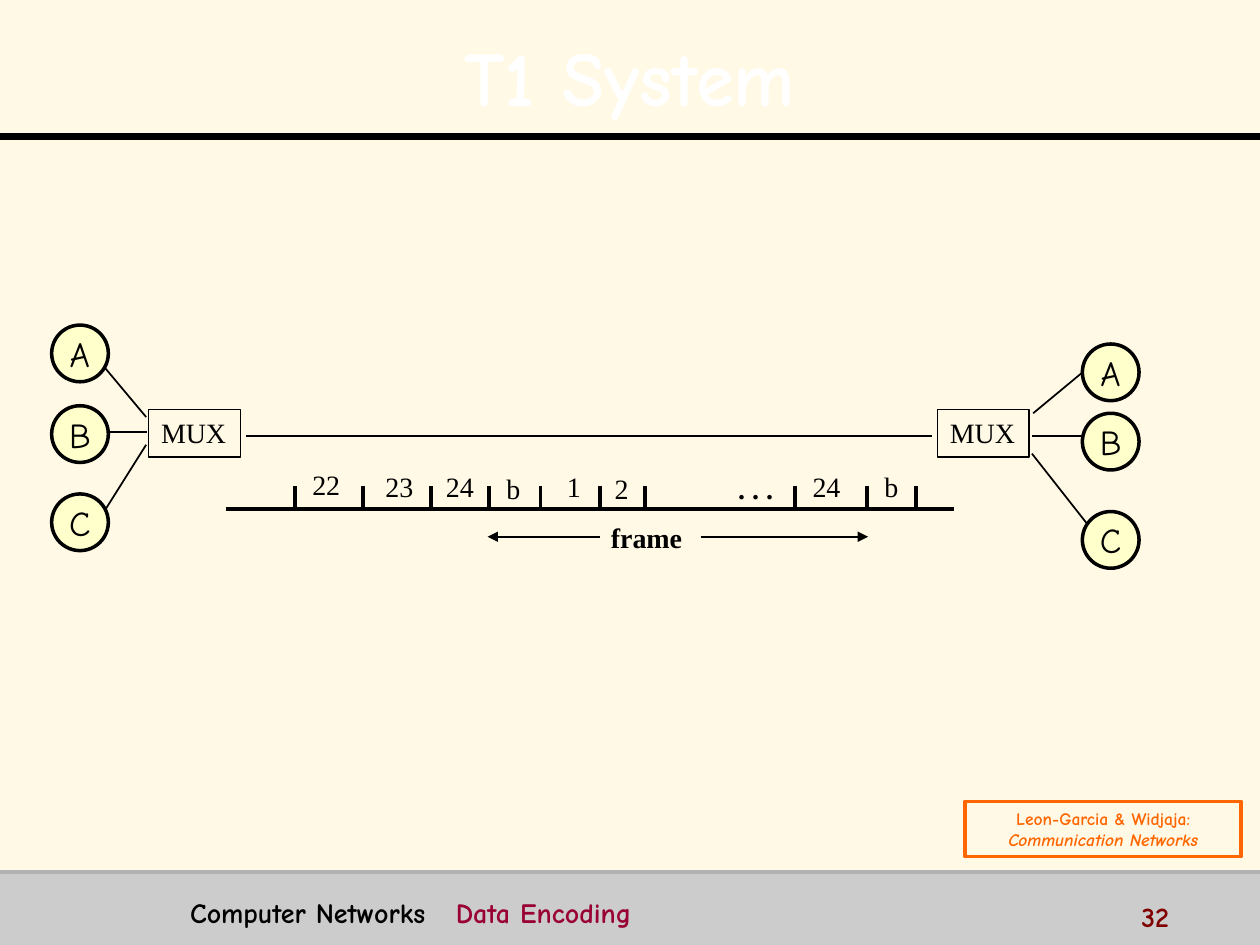
from lxml.etree import SubElement, fromstring
from pptx import Presentation
from pptx.dml.color import RGBColor
from pptx.enum.shapes import MSO_CONNECTOR as Connector, MSO_SHAPE as Shape
from pptx.enum.text import MSO_ANCHOR as Anchor, PP_ALIGN as Align
from pptx.oxml.ns import nsdecls, qn
from pptx.util import Inches, Pt

COLORS = {
    "paper": "FFF9E6", "ink": "000000", "white": "FFFFFF", "band": "CCCCCC",
    "band_edge": "B2B2B2", "topic": "990033", "number": "800000",
    "station": "FFFFCC", "citation": "FF6600",
}
COMIC, TIMES = "Comic Neue", "Times New Roman"


def rgb(name):
    """Return the named colour."""
    return RGBColor.from_string(COLORS[name])


def add_line(slide, start, end, width=1, color="ink", arrow=False):
    """Draw a straight line, with an arrowhead at its end if asked."""
    line = slide.shapes.add_connector(
        Connector.STRAIGHT, *(Inches(value) for value in (*start, *end)))
    line.line.width = Pt(width)
    line.line.color.rgb = rgb(color)
    if arrow:
        SubElement(line.line._get_or_add_ln(), qn("a:tailEnd"), type="triangle")
    SubElement(line._element.spPr, qn("a:effectLst"))


def add_run(paragraph, text, size, font=TIMES, color="ink", bold=False, italic=False):
    """Add one formatted run to a paragraph."""
    run = paragraph.add_run()
    run.text = text
    run.font.size, run.font.name = Pt(size), font
    run.font.bold, run.font.italic = bold, italic
    run.font.color.rgb = rgb(color)
    return run


def add_text(slide, box, wrap=False, anchor=Anchor.TOP, align=Align.LEFT):
    """Add a text box and return its first paragraph."""
    frame = slide.shapes.add_textbox(*(Inches(value) for value in box)).text_frame
    frame.word_wrap = wrap
    frame.vertical_anchor = anchor
    frame.paragraphs[0].alignment = align
    return frame.paragraphs[0]


def add_box(slide, kind, box, fill=None, line=None, width=1):
    """Add a flat preset shape and return its text frame."""
    shape = slide.shapes.add_shape(kind, *(Inches(value) for value in box))
    shape.shadow.inherit = False
    if fill:
        shape.fill.solid()
        shape.fill.fore_color.rgb = rgb(fill)
    else:
        shape.fill.background()
    if line:
        shape.line.color.rgb = rgb(line)
        shape.line.width = Pt(width)
    else:
        shape.line.fill.background()
    return shape.text_frame


def add_header(slide, left, top, width, height):
    """Place the shadowed title above its full-width rule."""
    add_line(slide, (left, top + height), (left + width, top + height), 4)
    title = add_text(slide, (left + 0.2, top + 0.13, width - 0.4, 0.87),
                     True, Anchor.MIDDLE, Align.CENTER)
    title.line_spacing = 1.1
    run = add_run(title, "T1 System", 44, COMIC, "white", True)
    shadow = fromstring(
        f'<a:effectLst {nsdecls("a")}><a:outerShdw dist="35921" dir="2700000">'
        f'<a:srgbClr val="{COLORS["ink"]}"/></a:outerShdw></a:effectLst>')
    run.font._element.find(qn("a:solidFill")).addnext(shadow)


def add_footer(slide, left, top, width, height):
    """Place the grey band with course, topic and slide number."""
    add_box(slide, Shape.RECTANGLE, (left, top, width, height), "band")
    add_line(slide, (left, top), (left + width, top), 2, "band_edge")
    course = add_text(slide, (left + 1.41, top + 0.14, 7.28, 0.31), True)
    tabs = SubElement(course._p.get_or_add_pPr(), qn("a:tabLst"))
    SubElement(tabs, qn("a:tab"), pos=str(Inches(2.11)), algn="l")
    add_run(course, "Computer Networks\t", 16, COMIC, bold=True)
    add_run(course, "Data Encoding", 16, COMIC, "topic", True)
    number = add_text(slide, (left + 8.96, top + 0.17, 1, 0.25), True)
    add_run(number, "32", 16, COMIC, "number", True)


def add_stations(slide, left, tops, links):
    """Place stations A to C in a column and their links to the multiplexer."""
    for start, end in links:
        add_line(slide, start, end)
    for name, top in zip("ABC", tops):
        frame = add_box(slide, Shape.OVAL, (left, top, 0.45, 0.45), "station", "ink", 2)
        frame.word_wrap = False
        frame.vertical_anchor = Anchor.MIDDLE
        frame.paragraphs[0].alignment = Align.CENTER
        add_run(frame.paragraphs[0], name, 20, COMIC)


def add_mux(slide, left, top):
    """Place one multiplexer."""
    frame = add_box(slide, Shape.RECTANGLE, (left, top, 0.73, 0.38), line="ink")
    frame.word_wrap = False
    frame.vertical_anchor = Anchor.TOP
    frame.paragraphs[0].alignment = Align.LEFT
    add_run(frame.paragraphs[0], "MUX", 16)


def add_timeline(slide, left, top, width):
    """Place the slot axis with its ticks, slot labels and frame span."""
    add_line(slide, (left, top), (left + width, top), 2)
    for offset in (0.55, 1.09, 1.63, 2.09, 2.5, 2.97, 3.33, 4.52, 5.09, 5.48):
        add_line(slide, (left + offset, top - 0.18), (left + offset, top - 0.01), 2)
    slots = [
        ("22", 0.59, 0.38, 0.42), ("23", 1.17, 0.36, 0.42), ("24", 1.65, 0.36, 0.42),
        ("b", 2.13, 0.35, 0.31), ("1", 2.61, 0.36, 0.31), ("2", 2.99, 0.35, 0.31),
        ("24", 4.56, 0.36, 0.42), ("b", 5.13, 0.36, 0.31),
    ]
    for label, offset, rise, span in slots:
        add_run(add_text(slide, (left + offset, top - rise, span, 0.36)), label, 16)
    dots = add_text(slide, (left + 3.97, top - 0.35, 0.48, 0.63))
    add_run(dots, ". . .", 16, bold=True)
    caption = add_text(slide, (left + 2.96, top + 0.04, 0.77, 0.36))
    add_run(caption, "frame", 16, bold=True)
    for start, end in ((2.97, 2.08), (3.77, 5.1)):
        add_line(slide, (left + start, top + 0.22), (left + end, top + 0.22), arrow=True)


def add_citation(slide, left, top, width, height):
    """Place the framed source of the material."""
    frame = add_box(slide, Shape.RECTANGLE, (left, top, width, height),
                    line="citation", width=2)
    frame.word_wrap = True
    frame.vertical_anchor = Anchor.MIDDLE
    authors, book = frame.paragraphs[0], frame.add_paragraph()
    authors.alignment = book.alignment = Align.CENTER
    add_run(authors, "Leon-Garcia & Widjaja:", 10, COMIC, "citation", True)
    add_run(book, "Communication Networks", 10, COMIC, "citation", True, True)


def main():
    """Build the slide and save it."""
    deck = Presentation()
    deck.slide_width, deck.slide_height = Inches(10), Inches(7.5)
    slide = deck.slides.add_slide(deck.slide_layouts[6])
    slide.background.fill.solid()
    slide.background.fill.fore_color.rgb = rgb("paper")
    add_footer(slide, 0, 6.92, 10, 0.58)
    add_header(slide, 0, 0, 10, 1.08)
    for left in (1.18, 7.44):
        add_mux(slide, left, 3.25)
    add_line(slide, (1.95, 3.46), (7.4, 3.46))
    add_timeline(slide, 1.79, 4.04, 5.78)
    add_stations(slide, 0.41, (2.58, 3.22, 3.92), [
        ((0.8, 2.88), (1.16, 3.31)),
        ((0.8, 3.43), (1.17, 3.43)),
        ((0.77, 4.15), (1.16, 3.53)),
    ])
    add_stations(slide, 8.59, (2.73, 3.28, 4.06), [
        ((8.2, 3.28), (8.61, 2.94)),
        ((8.19, 3.46), (8.61, 3.46)),
        ((8.19, 3.6), (8.63, 4.16)),
    ])
    add_citation(slide, 7.66, 6.36, 2.19, 0.44)
    deck.save("out.pptx")


if __name__ == "__main__":
    main()
